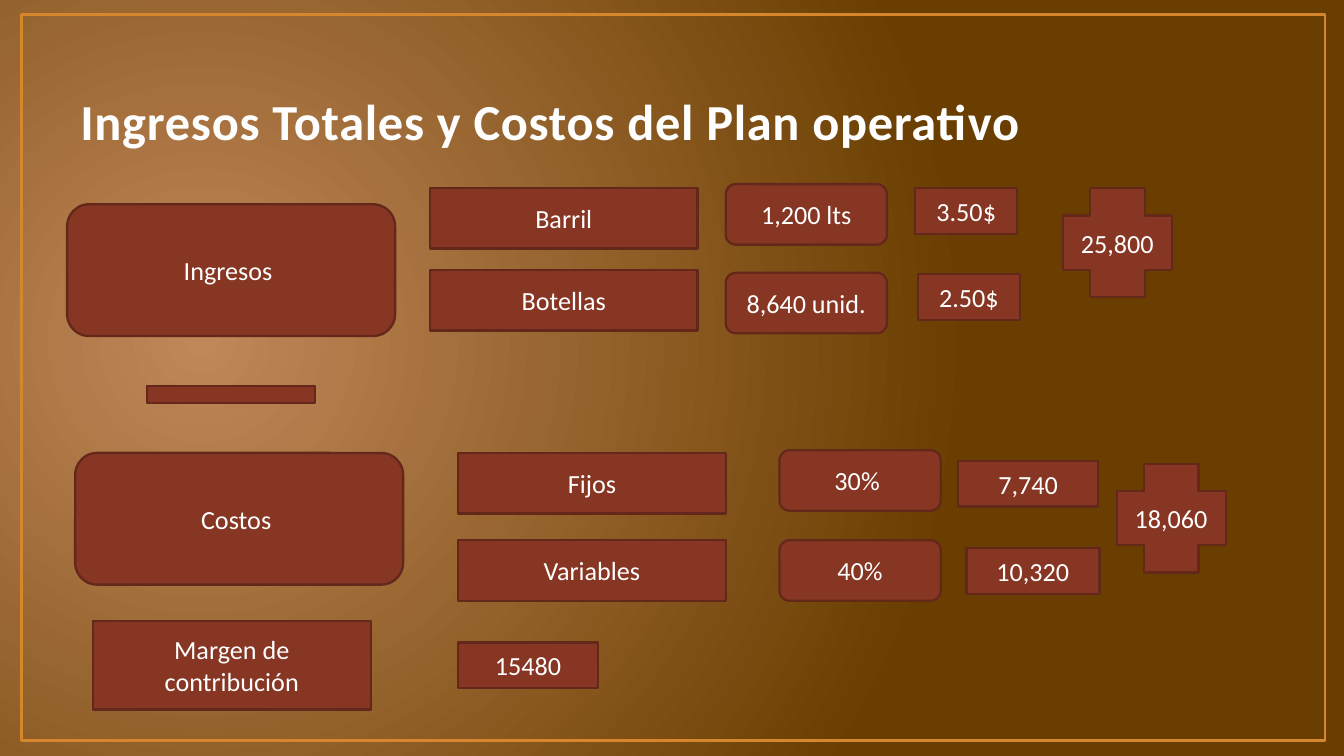
from dataclasses import dataclass

from lxml import etree
from pptx import Presentation
from pptx.dml.color import RGBColor
from pptx.enum.shapes import MSO_SHAPE
from pptx.enum.text import MSO_ANCHOR, PP_ALIGN
from pptx.oxml.ns import qn
from pptx.util import Inches, Pt

RECTANGLE = MSO_SHAPE.RECTANGLE
ROUNDED = MSO_SHAPE.FLOWCHART_ALTERNATE_PROCESS
PLUS = MSO_SHAPE.CROSS
MINUS = MSO_SHAPE.MATH_MINUS
BOTTOM, MIDDLE = MSO_ANCHOR.BOTTOM, MSO_ANCHOR.MIDDLE
CENTER = PP_ALIGN.CENTER


@dataclass(frozen=True)
class Theme:
    font: str = "Calibri"
    glow: str = "C08759"
    backdrop: str = "693E00"
    frame: str = "D6862D"
    box_fill: str = "873624"
    box_line: str = "64281B"
    box_text: str = "FFFFFF"
    title_text: str = "FEFEFE"
    title_outline: str = "441B12"
    title_size: float = 27
    box_size: float = 14
    frame_width: float = 1.5
    box_width: float = 1.25
    title_outline_width: float = 1.05


class SlideBuilder:
    def __init__(self, slide, theme):
        self.slide = slide
        self.theme = theme

    def background(self):
        """Radial glow centred at the left of the slide."""
        fill = self.slide.background.fill
        fill.gradient()
        for stop, color in zip(fill.gradient_stops, (self.theme.glow, self.theme.backdrop)):
            stop.color.rgb = RGBColor.from_string(color)
        gradient = next(self.slide.element.iter(qn("a:gradFill")))
        linear = gradient.find(qn("a:lin"))
        radial = etree.Element(qn("a:path"), {"path": "circle"})
        etree.SubElement(radial, qn("a:fillToRect"),
                         {"l": "15000", "t": "50000", "r": "85000", "b": "60000"})
        gradient.replace(linear, radial)

    def outline(self, shape, color, width):
        shape.shadow.inherit = False
        shape.line.color.rgb = RGBColor.from_string(color)
        shape.line.width = Pt(width)

    def frame(self, *place):
        border = self.slide.shapes.add_shape(RECTANGLE, *map(Inches, place))
        border.fill.background()
        self.outline(border, self.theme.frame, self.theme.frame_width)

    def format_text(self, paragraph, size, color):
        for span in paragraph.runs:
            span.font.name = self.theme.font
            span.font.size = Pt(size)
            span.font.color.rgb = RGBColor.from_string(color)

    def title(self, text, *place):
        box = self.slide.shapes.add_textbox(*map(Inches, place))
        frame = box.text_frame
        frame.word_wrap = True
        frame.vertical_anchor = BOTTOM
        frame.text = text
        para = frame.paragraphs[0]
        self.format_text(para, self.theme.title_size, self.theme.title_text)
        span = para.runs[0]
        span.font.bold = True
        properties = span.font._element
        properties.set("spc", "40")
        line = etree.Element(qn("a:ln"), {"w": str(Pt(self.theme.title_outline_width))})
        solid = etree.SubElement(line, qn("a:solidFill"))
        etree.SubElement(solid, qn("a:srgbClr"), {"val": self.theme.title_outline})
        properties.insert(0, line)

    def box(self, kind, text, *place):
        box = self.slide.shapes.add_shape(kind, *map(Inches, place))
        box.fill.solid()
        box.fill.fore_color.rgb = RGBColor.from_string(self.theme.box_fill)
        self.outline(box, self.theme.box_line, self.theme.box_width)
        if text:
            box.text_frame.text = text
            box.text_frame.word_wrap = kind != PLUS
            box.text_frame.vertical_anchor = MIDDLE
            para = box.text_frame.paragraphs[0]
            para.alignment = CENTER
            self.format_text(para, self.theme.box_size, self.theme.box_text)


GROUP = (ROUNDED, 2.44, 0.98)
CONCEPT = (RECTANGLE, 1.99, 0.45)
QUANTITY = (ROUNDED, 1.2, 0.45)
PRICE = (RECTANGLE, 0.76, 0.34)
AMOUNT = (RECTANGLE, 1.04, 0.34)
NARROW_AMOUNT = (RECTANGLE, 0.99, 0.34)
TOTAL = (PLUS, 0.81, 0.81)
SIGN = (MINUS, 1.7, 0.55)
MARGIN = (RECTANGLE, 2.07, 0.66)

# Style, text, left, top
BOXES = [
    (GROUP, "Ingresos ", 0.5, 1.52),
    (CONCEPT, "Barril", 3.2, 1.4),
    (CONCEPT, "Botellas", 3.2, 2.01),
    (QUANTITY, "1,200 lts", 5.4, 1.37),
    (QUANTITY, "8,640 unid.", 5.4, 2.03),
    (PRICE, "3.50$", 6.81, 1.4),
    (PRICE, "2.50$", 6.83, 2.04),
    (TOTAL, "25,800", 7.91, 1.4),
    (GROUP, "Costos ", 0.56, 3.37),
    (CONCEPT, "Fijos", 3.41, 3.37),
    (CONCEPT, "Variables", 3.41, 4.02),
    (QUANTITY, "30% ", 5.8, 3.35),
    (QUANTITY, "40%", 5.8, 4.02),
    (AMOUNT, "7,740", 7.13, 3.43),
    (NARROW_AMOUNT, "10,320", 7.19, 4.08),
    (TOTAL, "18,060", 8.31, 3.45),
    (SIGN, "", 0.87, 2.66),
    (MARGIN, "Margen de contribución", 0.69, 4.62),
    (AMOUNT, "15480", 3.41, 4.78),
]


def main():
    deck = Presentation()
    deck.slide_width = Inches(10)
    deck.slide_height = deck.slide_width * 9 // 16
    page = SlideBuilder(deck.slides.add_slide(deck.slide_layouts[6]), Theme())
    page.background()
    page.frame(0.16, 0.11, 9.7, 5.4)
    page.title("Ingresos Totales y Costos del Plan operativo", 0.5, 0.23, 9, 0.94)
    for (kind, width, height), text, left, top in BOXES:
        page.box(kind, text, left, top, width, height)
    deck.save("out.pptx")


if __name__ == "__main__":
    main()
